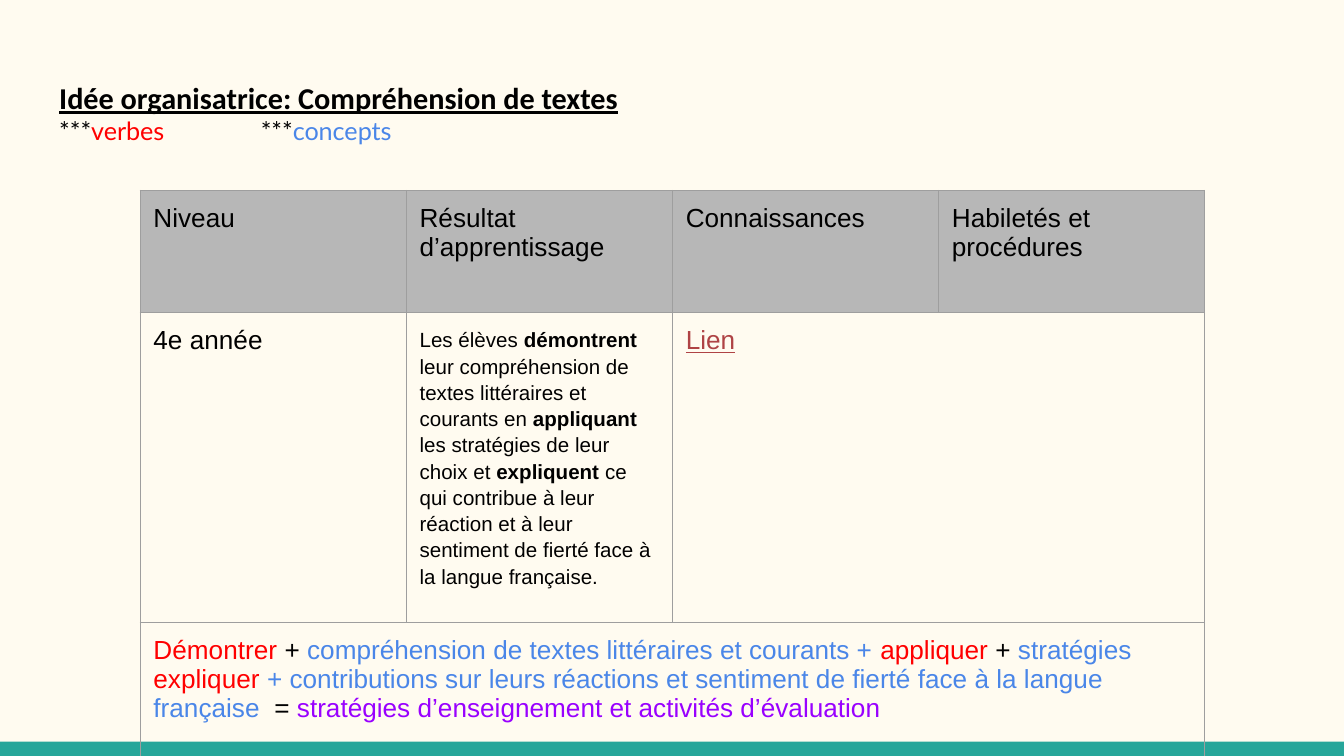
import dataclasses
import typing

import lxml.etree
import pptx
import pptx.dml.color
import pptx.enum.shapes
import pptx.enum.text
import pptx.oxml.ns
import pptx.util

Cm = pptx.util.Cm
Pt = pptx.util.Pt

COLORS = {
    "background": "FFFBF0",
    "band": "26A69A",
    "header": "B7B7B7",
    "border": "9E9E9E",
    "text": "000000",
    "verb": "FF0000",
    "concept": "4A86E8",
    "link": "AF4345",
    "strategy": "9900FF",
}
MARGIN = Cm(0.25)
COLUMN_WIDTH = Cm(5.03)
ROW_HEIGHTS = (Cm(2.31), Cm(5.49), Cm(2.72))


@dataclasses.dataclass(frozen=True)
class Piece:
    text: str
    color: str = "text"
    size: float = 14
    font: str = "Arial"
    bold: bool = False
    underline: bool = False


@dataclasses.dataclass(frozen=True)
class CellContent:
    row: int
    column: int
    pieces: tuple[Piece, ...]
    span: int = 1
    line_spacing: typing.Optional[float] = None


def legend(text: str, color: str = "text") -> Piece:
    return Piece(text, color, 13.5, "Lato")


def outcome(text: str, bold: bool = False) -> Piece:
    return Piece(text, size=11, bold=bold)


TITLE_LINES = (
    (Piece("Idée organisatrice: Compréhension de textes", size=16.2,
           font="Calibri", bold=True, underline=True),),
    (legend("***"), legend("verbes", "verb"),
     legend("\t\t***"), legend("concepts", "concept")),
)
HEADERS = ("Niveau", "Résultat d’apprentissage", "Connaissances", "Habiletés et procédures")
CONTENTS = (
    *(CellContent(0, column, (Piece(text),)) for column, text in enumerate(HEADERS)),
    CellContent(1, 0, (Piece("4e année"),)),
    CellContent(1, 1, (
        outcome("Les élèves "),
        outcome("démontrent", True),
        outcome(" leur compréhension de textes littéraires et courants en "),
        outcome("appliquant", True),
        outcome(" les stratégies de leur choix et "),
        outcome("expliquent", True),
        outcome(" ce qui contribue à leur réaction et à leur sentiment de fierté"
                " face à la langue française."),
    ), line_spacing=1.15),
    CellContent(1, 2, (Piece("Lien", "link", underline=True),), span=2),
    CellContent(2, 0, (
        Piece("Démontrer ", "verb"),
        Piece("+ "),
        Piece("compréhension de textes littéraires et courants + ", "concept"),
        Piece("appliquer", "verb"),
        Piece(" + "),
        Piece("stratégies ", "concept"),
        Piece("expliquer ", "verb"),
        Piece("+ contributions sur leurs réactions et sentiment de fierté"
              " face à la langue française  ", "concept"),
        Piece("= "),
        Piece("stratégies d’enseignement et activités d’évaluation", "strategy"),
    ), span=4),
)


def rgb(name: str) -> pptx.dml.color.RGBColor:
    return pptx.dml.color.RGBColor.from_string(COLORS[name])


def write_pieces(paragraph: typing.Any, pieces: tuple[Piece, ...]) -> None:
    for piece in pieces:
        run = paragraph.add_run()
        run.text = piece.text
        run.font.name = piece.font
        run.font.size = Pt(piece.size)
        run.font.bold = piece.bold
        run.font.underline = piece.underline
        run.font.color.rgb = rgb(piece.color)


def set_margins(target: typing.Any) -> None:
    target.margin_left = target.margin_right = MARGIN
    target.margin_top = target.margin_bottom = MARGIN


def add_borders(cell: typing.Any) -> None:
    qn = pptx.oxml.ns.qn
    properties = cell._tc.get_or_add_tcPr()
    for side in ("lnL", "lnR", "lnT", "lnB"):
        line = lxml.etree.SubElement(properties, qn(f"a:{side}"), w=str(Pt(0.75)))
        fill = lxml.etree.SubElement(line, qn("a:solidFill"))
        lxml.etree.SubElement(fill, qn("a:srgbClr"), val=COLORS["border"])


def add_band(slide: typing.Any, width: int) -> None:
    shape = slide.shapes.add_shape(
        pptx.enum.shapes.MSO_SHAPE.RECTANGLE, 0, Cm(14.02), width, Cm(0.27))
    shape.shadow.inherit = False
    shape.fill.solid()
    shape.fill.fore_color.rgb = rgb("band")
    shape.line.fill.background()


def add_title(slide: typing.Any) -> None:
    text_frame = slide.shapes.add_textbox(
        Cm(0.87), Cm(1.25), Cm(23.67), Cm(1.7)).text_frame
    text_frame.word_wrap = True
    text_frame.vertical_anchor = pptx.enum.text.MSO_ANCHOR.TOP
    set_margins(text_frame)
    for index, pieces in enumerate(TITLE_LINES):
        paragraph = text_frame.add_paragraph() if index else text_frame.paragraphs[0]
        write_pieces(paragraph, pieces)


def add_outcome_table(slide: typing.Any) -> None:
    table = slide.shapes.add_table(
        len(ROW_HEIGHTS), len(HEADERS), Cm(2.65), Cm(3.6),
        COLUMN_WIDTH * len(HEADERS), sum(ROW_HEIGHTS)).table
    table.first_row = False
    table.horz_banding = False
    for column in table.columns:
        column.width = COLUMN_WIDTH
    for row, height in zip(table.rows, ROW_HEIGHTS):
        row.height = height
    for cell in table.iter_cells():
        set_margins(cell)
        add_borders(cell)
        cell.fill.background()
    for content in CONTENTS:
        cell = table.cell(content.row, content.column)
        if content.span > 1:
            cell.merge(table.cell(content.row, content.column + content.span - 1))
        if content.row == 0:
            cell.fill.solid()
            cell.fill.fore_color.rgb = rgb("header")
        paragraph = cell.text_frame.paragraphs[0]
        paragraph.line_spacing = content.line_spacing
        write_pieces(paragraph, content.pieces)


def main() -> None:
    presentation = pptx.Presentation()
    presentation.slide_width = Cm(25.4)
    presentation.slide_height = Cm(14.29)
    slide = presentation.slides.add_slide(presentation.slide_layouts[6])
    slide.background.fill.solid()
    slide.background.fill.fore_color.rgb = rgb("background")
    add_band(slide, presentation.slide_width)
    add_title(slide)
    add_outcome_table(slide)
    presentation.save("out.pptx")


if __name__ == "__main__":
    main()
